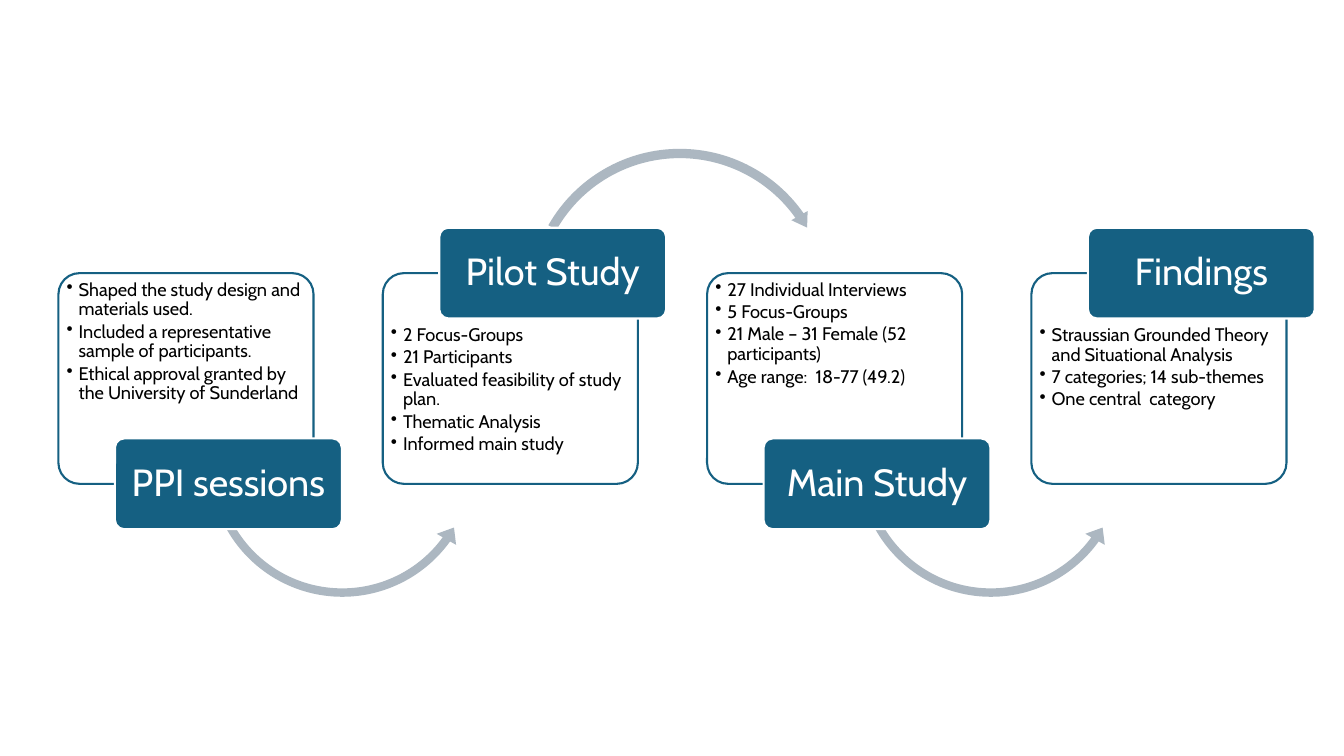
"""Build a four-step research process slide with cards, headers and curved arrows."""
from dataclasses import dataclass

from lxml.etree import SubElement
from pptx import Presentation
from pptx.dml.color import RGBColor
from pptx.enum.shapes import MSO_SHAPE as Preset
from pptx.enum.text import MSO_ANCHOR as Anchor, PP_ALIGN as Align
from pptx.oxml.ns import qn
from pptx.shapes.autoshape import Shape
from pptx.slide import Slide
from pptx.util import Inches, Pt


@dataclass(frozen=True)
class Theme:
    font: str = "Cabin"
    accent: RGBColor = RGBColor.from_string("156082")
    arrow: RGBColor = RGBColor.from_string("ACB7C1")
    light: RGBColor = RGBColor.from_string("FFFFFF")
    dark: RGBColor = RGBColor.from_string("000000")
    header_size: float = 27
    bullet_size: float = 13
    outline: float = 1.5


@dataclass(frozen=True)
class Layout:
    header_top: float
    text_inset: float
    arrow_preset: Preset
    arrow_offset: float
    arrow_top: float
    arrow_size: float
    arrow_adjustments: tuple[float, ...]


@dataclass(frozen=True)
class Step:
    title: str
    bullets: tuple[str, ...]
    layout: Layout


THEME = Theme()
FIRST_LEFT, LAST_LEFT = 0.58, 10.23
CARD_TOP, CARD_WIDTH, CARD_HEIGHT = 2.71, 2.53, 2.09
HEADER_OFFSET, HEADER_WIDTH, HEADER_HEIGHT = 0.56, 2.25, 0.9
BULLET_INDENT = Inches(0.12)

HEADER_BELOW = Layout(4.35, 0.01, Preset.LEFT_CIRCULAR_ARROW, 1.43, 3.22, 2.77,
                      (0.03, 3.75, 21.5, 90.25, 0.04))
HEADER_ABOVE = Layout(2.26, 0.46, Preset.CIRCULAR_ARROW, 1.4, 1.43, 3.09,
                      (0.03, 3.33, 194.92, 125.76, 0.03))

STEPS = (
    Step("PPI sessions", (
        "Shaped the study design and materials used.",
        "Included a representative sample of participants.",
        "Ethical approval granted by the University of Sunderland",
    ), HEADER_BELOW),
    Step("Pilot Study", (
        "2 Focus-Groups",
        "21 Participants",
        "Evaluated feasibility of study plan.",
        "Thematic Analysis",
        "Informed main study",
    ), HEADER_ABOVE),
    Step("Main Study", (
        "27 Individual Interviews",
        "5 Focus-Groups",
        "21 Male – 31 Female (52 participants)",
        "Age range:  18-77 (49.2)",
    ), HEADER_BELOW),
    Step("Findings", (
        "Straussian Grounded Theory and Situational Analysis",
        "7 categories; 14 sub-themes",
        "One central  category",
    ), HEADER_ABOVE),
)


def add_filled(slide: Slide, preset: Preset, left: float, top: float, width: float,
               height: float, fill: RGBColor, line: RGBColor | None = None) -> Shape:
    """Add a flat preset shape, outlined when a line colour is given."""
    shape = slide.shapes.add_shape(
        preset, Inches(left), Inches(top), Inches(width), Inches(height))
    shape.shadow.inherit = False
    shape.fill.solid()
    shape.fill.fore_color.rgb = fill
    if line is None:
        shape.line.fill.background()
    else:
        shape.line.color.rgb = line
        shape.line.width = Pt(THEME.outline)
    return shape


def write_text(shape: Shape, text: str, size: float, color: RGBColor, align: Align,
               anchor: Anchor, inset_x: float, inset_y: float, space: float) -> None:
    """Fill a shape with text and apply one style to all its paragraphs."""
    frame = shape.text_frame
    frame.text = text
    frame.word_wrap = True
    frame.vertical_anchor = anchor
    frame.margin_left = frame.margin_right = Inches(inset_x)
    frame.margin_top = frame.margin_bottom = Inches(inset_y)
    for paragraph in frame.paragraphs:
        paragraph.alignment = align
        paragraph.line_spacing = 0.9
        paragraph.space_after = Pt(size * space)
        for run in paragraph.runs:
            run.font.name = THEME.font
            run.font.size = Pt(size)
            run.font.color.rgb = color


def add_card(slide: Slide, step: Step, left: float) -> None:
    """Add the outlined card with its bullet list."""
    card = add_filled(slide, Preset.ROUNDED_RECTANGLE, left, CARD_TOP,
                      CARD_WIDTH, CARD_HEIGHT, THEME.light, THEME.accent)
    card.adjustments[0] = 0.1
    fill_color = card.fill._xPr.find(qn("a:solidFill"))[0]
    SubElement(fill_color, qn("a:alpha"), val="90000")
    write_text(card, "\n".join(step.bullets), THEME.bullet_size, THEME.dark,
               Align.LEFT, Anchor.TOP, 0.02, step.layout.text_inset, 0.15)
    card.text_frame.margin_bottom = 0
    for paragraph in card.text_frame.paragraphs:
        paragraph.level = 1
        properties = paragraph._p.get_or_add_pPr()
        properties.set("marL", str(BULLET_INDENT))
        properties.set("indent", str(-BULLET_INDENT))
        SubElement(properties, qn("a:buChar"), char="•")


def add_arrow(slide: Slide, layout: Layout, left: float) -> None:
    """Add the curved arrow that leads to the next step."""
    arrow = add_filled(slide, layout.arrow_preset, left + layout.arrow_offset,
                       layout.arrow_top, layout.arrow_size, layout.arrow_size, THEME.arrow)
    for index, value in enumerate(layout.arrow_adjustments):
        arrow.adjustments[index] = value


def add_header(slide: Slide, step: Step, left: float) -> None:
    """Add the solid title block that overlaps the card."""
    header = add_filled(slide, Preset.ROUNDED_RECTANGLE, left + HEADER_OFFSET,
                        step.layout.header_top, HEADER_WIDTH, HEADER_HEIGHT,
                        THEME.accent, THEME.light)
    header.adjustments[0] = 0.1
    write_text(header, step.title, THEME.header_size, THEME.light,
               Align.CENTER, Anchor.MIDDLE, 0.06, 0.04, 0.35)


def main() -> None:
    """Create the presentation and save it."""
    presentation = Presentation()
    presentation.slide_width = Inches(13.33)
    presentation.slide_height = Inches(7.5)
    slide = presentation.slides.add_slide(presentation.slide_layouts[6])
    pitch = (LAST_LEFT - FIRST_LEFT) / (len(STEPS) - 1)
    for index, step in enumerate(STEPS):
        left = FIRST_LEFT + index * pitch
        add_card(slide, step, left)
        if step is not STEPS[-1]:
            add_arrow(slide, step.layout, left)
        add_header(slide, step, left)
    presentation.save("out.pptx")


if __name__ == "__main__":
    main()
